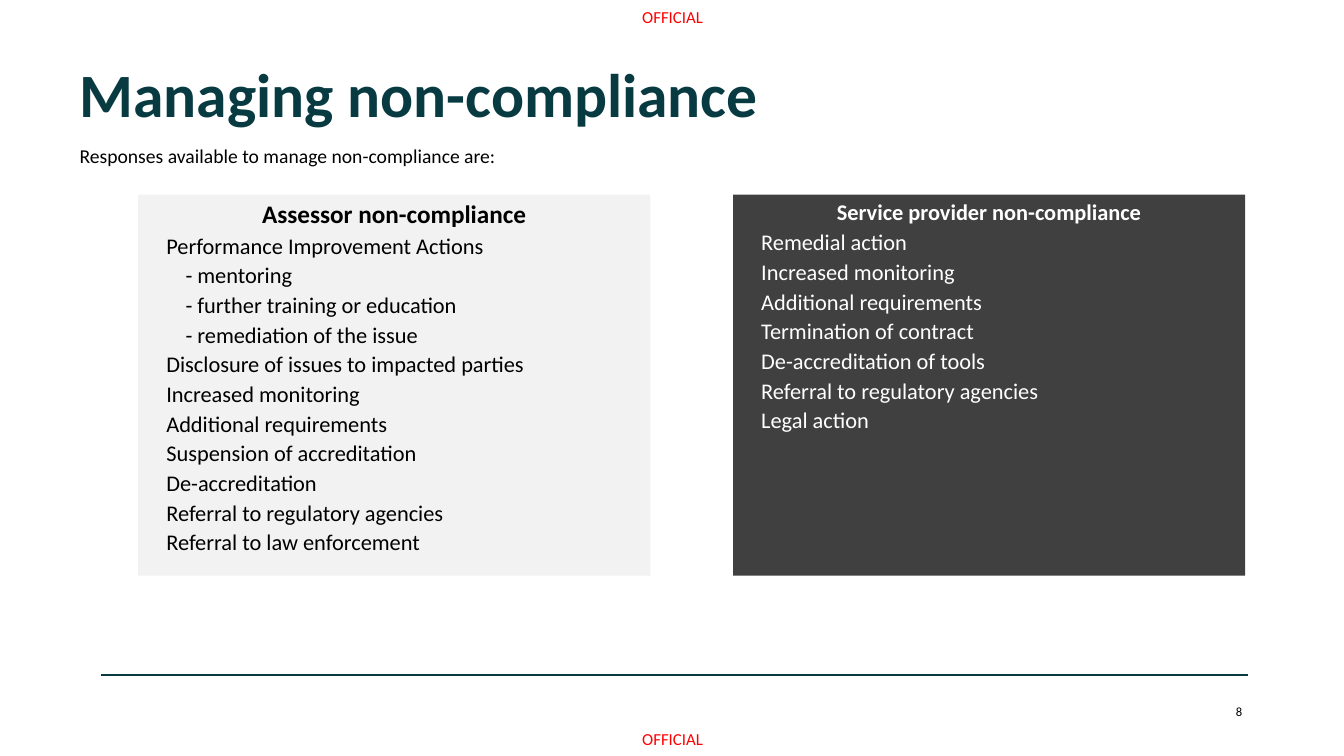
from dataclasses import dataclass

from lxml import etree
from pptx import Presentation
from pptx.dml.color import RGBColor
from pptx.enum.shapes import MSO_CONNECTOR, MSO_SHAPE
from pptx.enum.text import MSO_ANCHOR, PP_ALIGN
from pptx.oxml.ns import qn
from pptx.util import Inches, Pt

LEFT, CENTER, RIGHT = PP_ALIGN.LEFT, PP_ALIGN.CENTER, PP_ALIGN.RIGHT
TOP, MIDDLE = MSO_ANCHOR.TOP, MSO_ANCHOR.MIDDLE
RECTANGLE = MSO_SHAPE.RECTANGLE
STRAIGHT = MSO_CONNECTOR.STRAIGHT


@dataclass(frozen=True)
class Theme:
    font: str = "Calibri"
    teal: str = "083A42"
    red: str = "FF0000"
    black: str = "000000"
    white: str = "FFFFFF"
    light: str = "F2F2F2"
    dark: str = "404040"
    title: int = 44
    heading: int = 18
    item: int = 16
    intro: int = 14
    marking: int = 12
    number: int = 9


class SlideBuilder:
    def __init__(self, slide, theme):
        self.slide = slide
        self.theme = theme

    def frame(self, shape, insets, anchor=TOP):
        frame = shape.text_frame
        frame.word_wrap = True
        frame.vertical_anchor = anchor
        frame.margin_left = frame.margin_right = Inches(insets[0])
        frame.margin_top, frame.margin_bottom = Inches(insets[1]), Inches(insets[2])
        return frame

    def fill_paragraph(self, paragraph, text, size, color, bold=False, align=LEFT, after=0):
        paragraph.text = text
        paragraph.alignment = align
        paragraph.space_after = Pt(after)
        font = paragraph.font
        font.name = self.theme.font
        font.size = Pt(size)
        font.bold = bold
        font.color.rgb = RGBColor.from_string(color)

    def text(self, place, text, size, color, insets=(0, 0, 0), anchor=TOP, **style):
        box = self.slide.shapes.add_textbox(*map(Inches, place))
        paragraph = self.frame(box, insets, anchor).paragraphs[0]
        self.fill_paragraph(paragraph, text, size, color, **style)
        return paragraph

    def rule(self, left, right, top):
        line = self.slide.shapes.add_connector(
            STRAIGHT, Inches(left), Inches(top), Inches(right), Inches(top))
        line.line.color.rgb = RGBColor.from_string(self.theme.teal)
        line.line.width = Pt(1.5)
        etree.SubElement(line._element.spPr, qn("a:effectLst"))

    def panel(self, left, fill, color, heading, heading_size, items):
        panel = self.slide.shapes.add_shape(
            RECTANGLE, Inches(left), Inches(1.93), Inches(5.08), Inches(3.78))
        panel.shadow.inherit = False
        panel.fill.solid()
        panel.fill.fore_color.rgb = RGBColor.from_string(fill)
        panel.line.fill.background()
        frame = self.frame(panel, (0.08, 0.04, 0.04))
        self.fill_paragraph(frame.paragraphs[0], heading, heading_size, color,
                            bold=True, align=CENTER, after=2)
        for item in items:
            paragraph = frame.add_paragraph()
            self.fill_paragraph(paragraph, item, self.theme.item, color, after=2)
            margin, indent = (0.49, -0.1) if item.startswith("-") else (0.2, 0)
            properties = paragraph._p.get_or_add_pPr()
            properties.set("marL", str(Inches(margin)))
            properties.set("indent", str(Inches(indent)))


ASSESSOR_RESPONSES = [
    "Performance Improvement Actions",
    "- mentoring",
    "- further training or education",
    "- remediation of the issue",
    "Disclosure of issues to impacted parties",
    "Increased monitoring",
    "Additional requirements",
    "Suspension of accreditation",
    "De-accreditation",
    "Referral to regulatory agencies",
    "Referral to law enforcement",
]
PROVIDER_RESPONSES = [
    "Remedial action",
    "Increased monitoring",
    "Additional requirements",
    "Termination of contract",
    "De-accreditation of tools",
    "Referral to regulatory agencies",
    "Legal action",
]


def main():
    deck = Presentation()
    deck.slide_width, deck.slide_height = Inches(13.33), Inches(7.5)
    theme = Theme()
    page = SlideBuilder(deck.slides.add_slide(deck.slide_layouts[6]), theme)

    for top in (0.07, 7.23):
        page.text((6.37, top, 0.64, 0.2), "OFFICIAL", theme.marking, theme.red)
    page.rule(1, 12.38, 6.7)

    title = page.text((0.69, 0.6, 8.62, 0.73), "Managing non-compliance", theme.title,
                      theme.teal, insets=(0.1, 0.05, 0.05), anchor=MIDDLE, bold=True)
    title.line_spacing = 0.9
    page.text((0.69, 1.43, 8.69, 0.31), "Responses available to manage non-compliance are:",
              theme.intro, theme.black, insets=(0.1, 0, 0.05), after=6)

    page.panel(1.37, theme.light, theme.black, "Assessor non-compliance",
               theme.heading, ASSESSOR_RESPONSES)
    page.panel(7.27, theme.dark, theme.white, "Service provider non-compliance",
               theme.item, PROVIDER_RESPONSES)
    page.text((11.14, 6.98, 1.18, 0.15), "8", theme.number, theme.black, align=RIGHT)

    deck.save("out.pptx")


if __name__ == "__main__":
    main()
